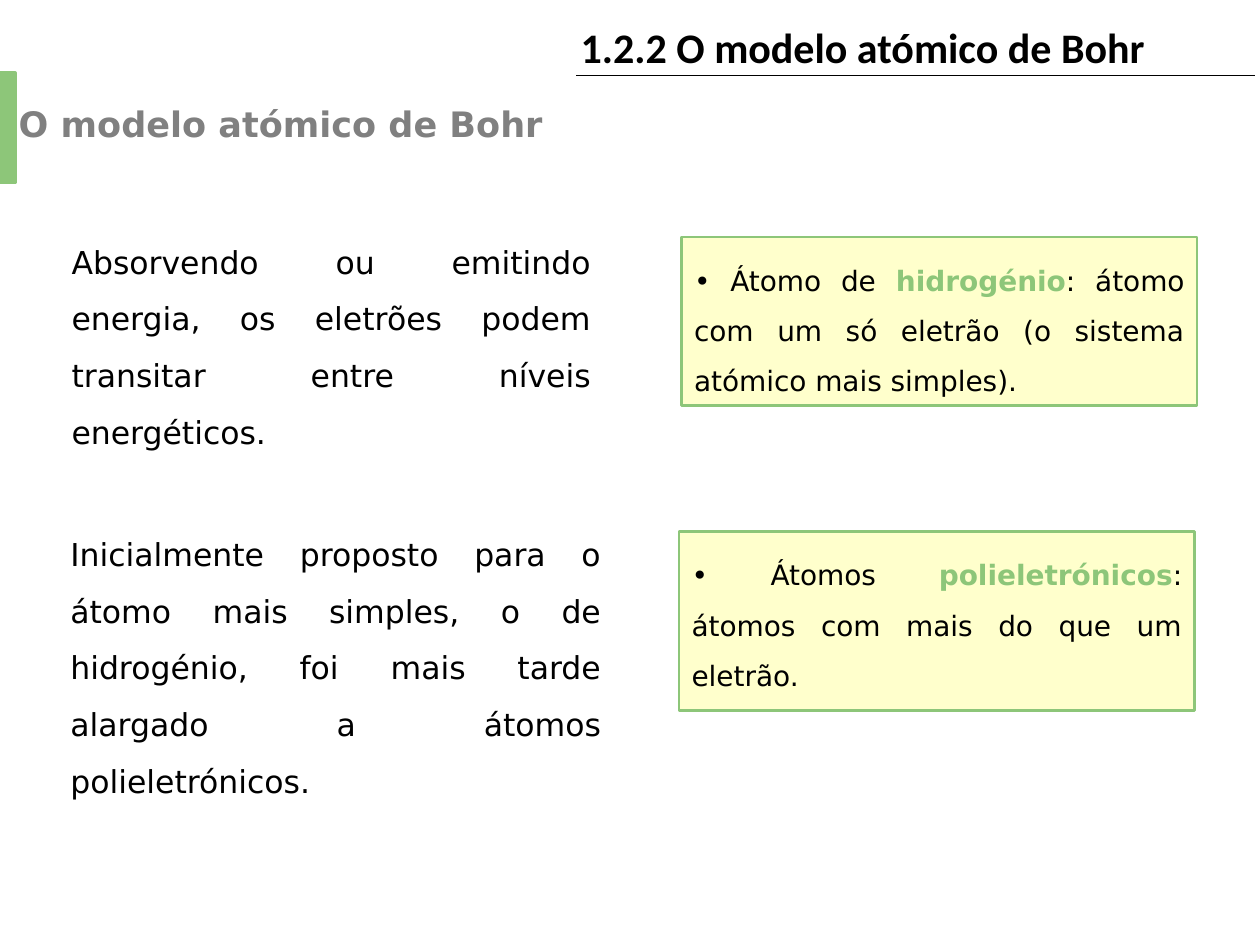
from dataclasses import dataclass

import pptx
import pptx.dml.color
import pptx.enum.shapes
import pptx.enum.text
import pptx.oxml
import pptx.util
from pptx.util import Pt

BLACK = "000000"
GREY = "808080"
GREEN = "8DC679"
CREAM = "FFFFCC"
BODY_FONT = "DejaVu Sans"


@dataclass
class Box:
    left: float
    top: float
    width: float
    height: float


@dataclass
class Run:
    text: str
    color: str = BLACK
    bold: bool = False


@dataclass
class TextBlock:
    box: Box
    runs: list[Run]
    size: float
    font: str = BODY_FONT
    justified: bool = True
    wrap: bool = True
    top_inset: float = 5.4


HEADINGS = [
    TextBlock(Box(324.7, 8.6, 339.8, 36), [Run("1.2.2 O modelo atómico de Bohr", bold=True)],
              24, "Calibri", justified=False, wrap=False, top_inset=3.6),
    TextBlock(Box(3.6, 53.3, 680.4, 35.3), [Run("O modelo atómico de Bohr", GREY, True)],
              20, justified=False),
]
BODY_TEXTS = [
    TextBlock(Box(33.8, 122.4, 311, 162.7),
              [Run("Absorvendo ou emitindo energia, os eletrões podem transitar "
                   "entre níveis energéticos.")], 18),
    TextBlock(Box(33.1, 289.4, 317.5, 190.8),
              [Run("Inicialmente proposto para o átomo mais simples, o de hidrogénio, "
                   "foi mais tarde alargado a átomos polieletrónicos.")], 18),
]
DEFINITIONS = [
    TextBlock(Box(389.5, 135.4, 294.5, 96.5),
              [Run("• Átomo de "), Run("hidrogénio", GREEN, True),
               Run(": átomo com um só eletrão (o sistema atómico mais simples).")], 16),
    TextBlock(Box(388.1, 303.8, 294.5, 102.2),
              [Run("• Átomos "), Run("polieletrónicos", GREEN, True),
               Run(": átomos com mais do que um eletrão.")], 16),
]
ACCENT_BAR = Box(-0.7, 41.8, 9.4, 62.6)


def rgb(color: str) -> pptx.dml.color.RGBColor:
    return pptx.dml.color.RGBColor.from_string(color)


def lengths(box: Box) -> list[pptx.util.Length]:
    return [Pt(value) for value in (box.left, box.top, box.width, box.height)]


def write_text(shape, block: TextBlock) -> None:
    frame = shape.text_frame
    frame.word_wrap = block.wrap
    frame.vertical_anchor = pptx.enum.text.MSO_ANCHOR.TOP
    frame.margin_top = Pt(block.top_inset)
    paragraph = frame.paragraphs[0]
    alignments = pptx.enum.text.PP_ALIGN
    paragraph.alignment = alignments.JUSTIFY if block.justified else alignments.LEFT
    if block.justified:
        paragraph.line_spacing = 1.5
    for part in block.runs:
        run = paragraph.add_run()
        run.text = part.text
        run.font.name = block.font
        run.font.size = Pt(block.size)
        run.font.bold = part.bold
        run.font.color.rgb = rgb(part.color)


def add_text(slide, block: TextBlock) -> None:
    write_text(slide.shapes.add_textbox(*lengths(block.box)), block)


def add_rectangle(slide, box: Box, fill: str, line_width: float):
    shape = slide.shapes.add_shape(
        pptx.enum.shapes.MSO_SHAPE.RECTANGLE, *lengths(box))
    shape.shadow.inherit = False
    shape.fill.solid()
    shape.fill.fore_color.rgb = rgb(fill)
    shape.line.color.rgb = rgb(GREEN)
    shape.line.width = Pt(line_width)
    return shape


def add_title_rule(slide) -> None:
    connector = slide.shapes.add_connector(
        pptx.enum.shapes.MSO_CONNECTOR.STRAIGHT, Pt(717.1), Pt(43.2), Pt(329), Pt(43.2))
    connector.line.color.rgb = rgb(BLACK)
    connector.line.width = Pt(0.75)
    properties = connector.element.spPr
    properties.append(pptx.oxml.parse_xml(
        '<a:effectLst xmlns:a="http://schemas.openxmlformats.org/drawingml/2006/main"/>'))


def main() -> None:
    presentation = pptx.Presentation()
    presentation.slide_width, presentation.slide_height = Pt(720), Pt(540)
    slide = presentation.slides.add_slide(presentation.slide_layouts[6])

    add_title_rule(slide)
    for block in HEADINGS + BODY_TEXTS:
        add_text(slide, block)
    for block in DEFINITIONS:
        write_text(add_rectangle(slide, block.box, CREAM, 1.5), block)
    add_rectangle(slide, ACCENT_BAR, GREEN, 2)

    presentation.save("out.pptx")


if __name__ == "__main__":
    main()
